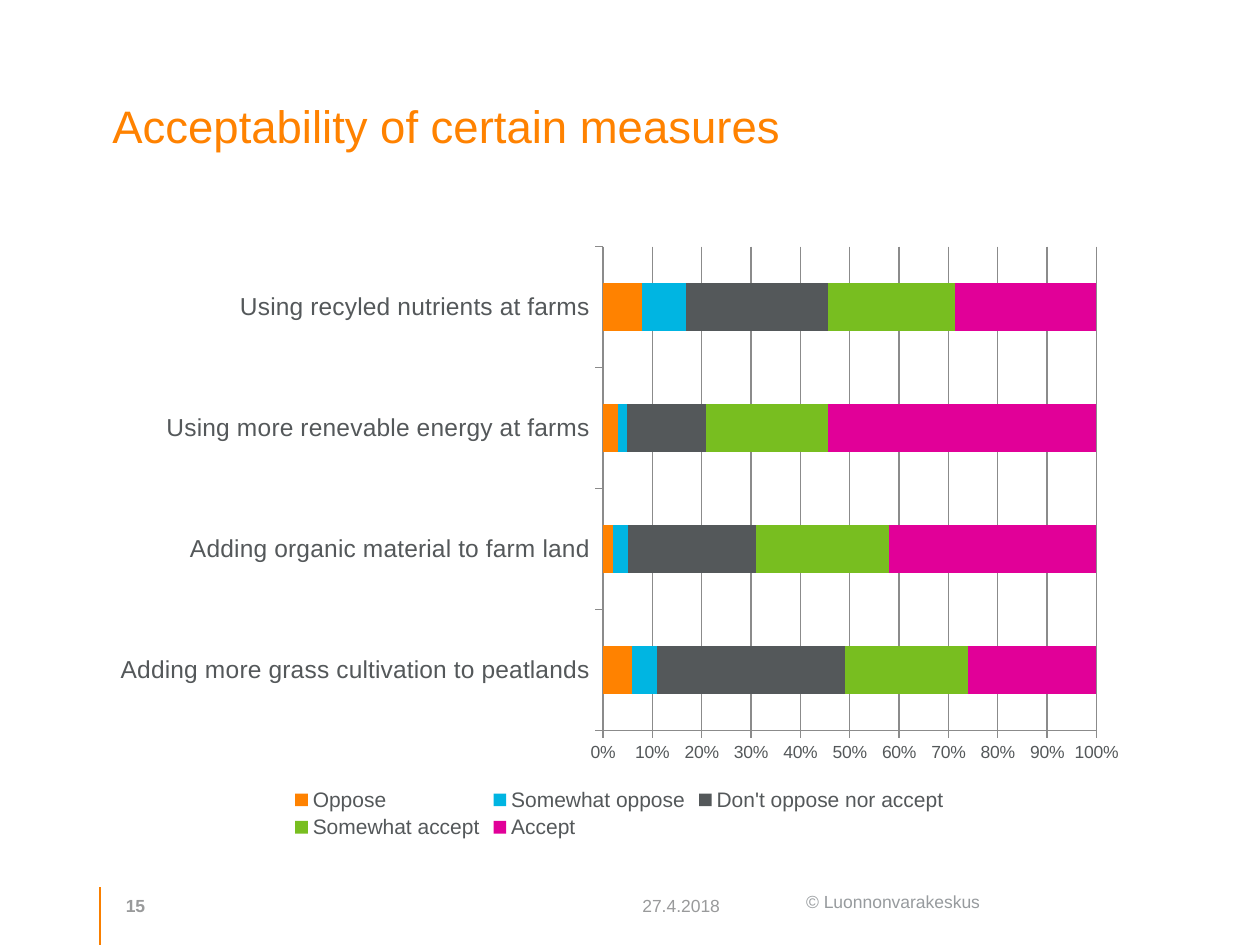
from dataclasses import dataclass

from lxml import etree
from pptx import Presentation
from pptx.chart.data import CategoryChartData
from pptx.dml.color import RGBColor
from pptx.enum.chart import XL_CHART_TYPE, XL_LEGEND_POSITION, XL_TICK_MARK
from pptx.enum.shapes import MSO_CONNECTOR
from pptx.enum.text import MSO_ANCHOR, PP_ALIGN
from pptx.oxml.ns import qn
from pptx.util import Pt

STACKED_BAR = XL_CHART_TYPE.BAR_STACKED_100
LEGEND_BOTTOM = XL_LEGEND_POSITION.BOTTOM
TICK_OUTSIDE = XL_TICK_MARK.OUTSIDE
STRAIGHT = MSO_CONNECTOR.STRAIGHT
TOP, BOTTOM = MSO_ANCHOR.TOP, MSO_ANCHOR.BOTTOM
LEFT = PP_ALIGN.LEFT

FONT = "Arial"
ORANGE, DARK_GRAY, FOOTER_GRAY, AXIS_GRAY = "FF8200", "54585A", "999A9B", "8B8B8B"
MARGIN, CONTENT_WIDTH, FOOTER_TOP = 57, 594, 505.5


@dataclass
class FooterItem:
    text: str
    left: float
    width: float
    height: float = 21.6
    color: str = FOOTER_GRAY
    bold: bool = False
    anchor: MSO_ANCHOR = BOTTOM


@dataclass
class Answer:
    name: str
    color: str
    shares: tuple


FOOTER = [
    FooterItem("© Luonnonvarakeskus", 453.6, 139.7, 19.4, "979B9E", anchor=TOP),
    FooterItem("15", 64.8, 35.3, bold=True),
    FooterItem("27.4.2018", 360, 88.6),
]

MEASURES = [
    "Adding more grass cultivation to peatlands",
    "Adding organic material to farm land",
    "Using more renevable energy at farms",
    "Using recyled nutrients at farms",
]

ANSWERS = [
    Answer("Oppose", ORANGE, (6, 2, 3, 8)),
    Answer("Somewhat oppose", "00B5E2", (5, 3, 2, 9)),
    Answer("Don't oppose nor accept", DARK_GRAY, (38, 26, 16, 29)),
    Answer("Somewhat accept", "78BE20", (25, 27, 25, 26)),
    Answer("Accept", "E10098", (26, 42, 55, 29)),
]


def rgb(color: str) -> RGBColor:
    return RGBColor.from_string(color)


def format_font(font, size: float, color: str, bold: bool = False) -> None:
    values = {"name": FONT, "size": Pt(size), "bold": bold}
    for attribute, value in values.items():
        setattr(font, attribute, value)
    font.color.rgb = rgb(color)


def format_line(line, color: str, width: float) -> None:
    line.color.rgb = rgb(color)
    line.width = Pt(width)


def set_text(shape, text: str, size: float, color: str, bold: bool, anchor) -> None:
    frame = shape.text_frame
    frame.word_wrap = True
    frame.vertical_anchor = anchor
    para = frame.paragraphs[0]
    para.alignment = LEFT
    span = para.add_run()
    span.text = text
    format_font(span.font, size, color, bold)


def add_title(page, text: str) -> None:
    title = page.shapes.title
    frame = {"left": MARGIN, "top": 52.6, "width": CONTENT_WIDTH, "height": 82}
    for attribute, value in frame.items():
        setattr(title, attribute, Pt(value))
    set_text(title, text, 26, ORANGE, False, TOP)


def add_footer_item(page, item: FooterItem) -> None:
    box = page.shapes.add_textbox(
        Pt(item.left), Pt(FOOTER_TOP), Pt(item.width), Pt(item.height))
    set_text(box, item.text, 10, item.color, item.bold, item.anchor)


def add_footer_rule(page) -> None:
    rule = page.shapes.add_connector(
        STRAIGHT, Pt(MARGIN), Pt(507), Pt(MARGIN), Pt(540))
    format_line(rule.line, "F97F00", 1)
    etree.SubElement(rule._element.spPr, qn("a:effectLst"))


def add_answer_chart(page) -> None:
    data = CategoryChartData()
    data.categories = MEASURES
    for answer in ANSWERS:
        data.add_series(answer.name, answer.shares)
    chart = page.shapes.add_chart(
        STACKED_BAR, Pt(MARGIN), Pt(134), Pt(CONTENT_WIDTH), Pt(348), data).chart
    chart.has_title = False
    format_font(chart.font, 10, DARK_GRAY)

    # Bars
    plot = chart.plots[0]
    plot.gap_width, plot.overlap = 150, 100
    plot.vary_by_categories = False
    for series, answer in zip(plot.series, ANSWERS):
        series.format.fill.solid()
        series.format.fill.fore_color.rgb = rgb(answer.color)

    # Axes and gridlines
    for axis, size in ((chart.category_axis, 14), (chart.value_axis, 10)):
        axis.major_tick_mark = TICK_OUTSIDE
        format_font(axis.tick_labels.font, size, DARK_GRAY)
        format_line(axis.format.line, AXIS_GRAY, 0.75)
    shares = chart.value_axis
    shares.has_major_gridlines = True
    format_line(shares.major_gridlines.format.line, AXIS_GRAY, 0.75)
    shares.tick_labels.number_format = "0%"
    shares.tick_labels.number_format_is_linked = False

    # Legend
    chart.has_legend = True
    chart.legend.position = LEGEND_BOTTOM
    chart.legend.include_in_layout = False
    format_font(chart.legend.font, 12, DARK_GRAY)


def main() -> None:
    deck = Presentation()
    deck.slide_width, deck.slide_height = Pt(720), Pt(540)
    page = deck.slides.add_slide(deck.slide_layouts[5])
    add_footer_rule(page)
    for item in FOOTER:
        add_footer_item(page, item)
    add_title(page, "Acceptability of certain measures")
    add_answer_chart(page)
    deck.save("out.pptx")


if __name__ == "__main__":
    main()
